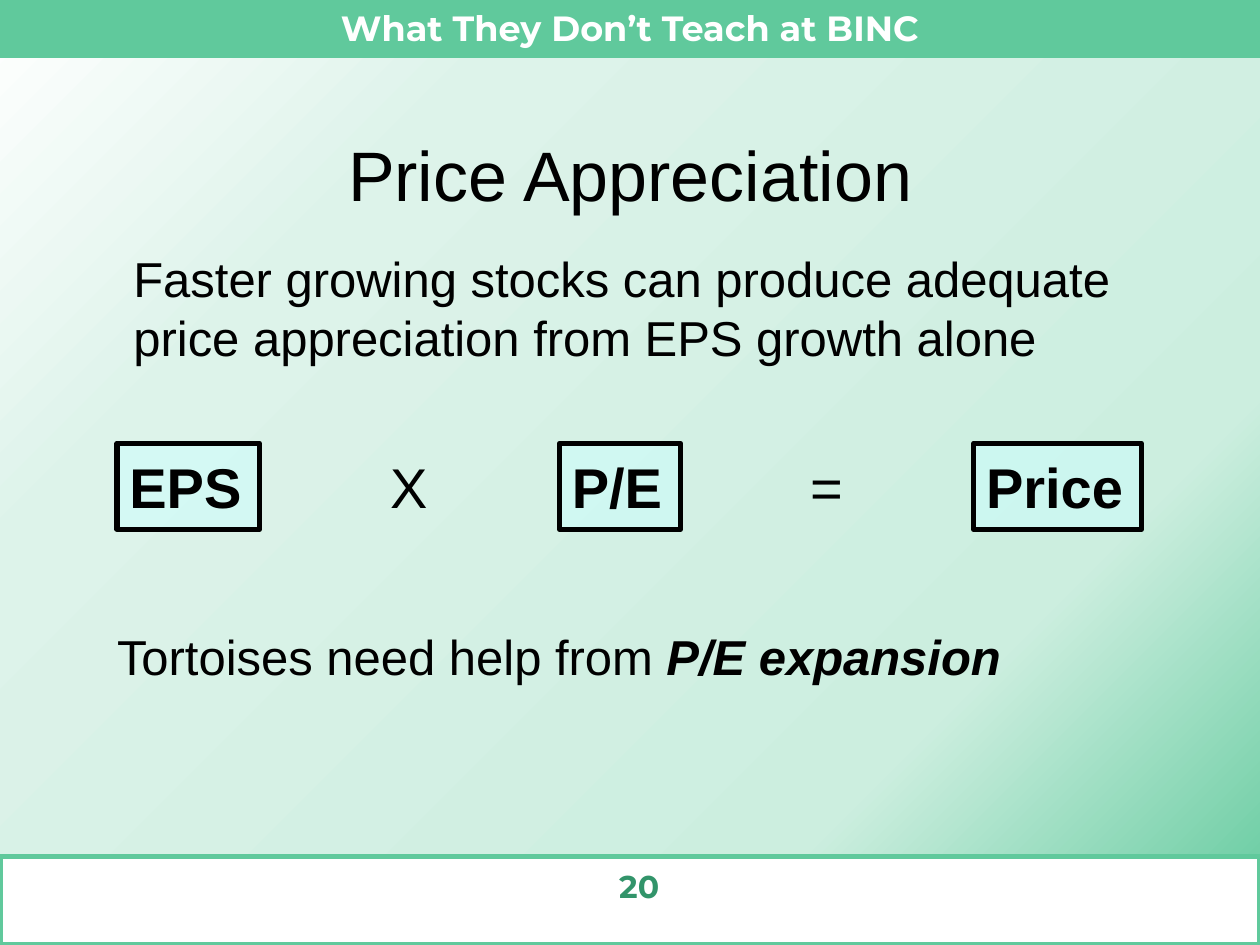
from lxml import etree
from pptx import Presentation
from pptx import util as u
from pptx.dml.color import RGBColor
from pptx.enum import shapes, text
from pptx.oxml import ns

GREEN = RGBColor(0x60, 0xC9, 0x9C)
DARK_GREEN = RGBColor(0x32, 0x94, 0x6A)
PALE_CYAN = RGBColor(0xCC, 0xFF, 0xFF)
WHITE = RGBColor(0xFF, 0xFF, 0xFF)
BLACK = RGBColor(0x00, 0x00, 0x00)
MIST = RGBColor(0xDD, 0xF3, 0xEA)
MINT = RGBColor(0xCC, 0xEE, 0xDF)


class SlideBuilder:
    body_font = "Arial"
    brand_font = "Montserrat"
    line_width = u.Pt(3)

    def __init__(self, slide):
        self.slide = slide

    def background(self, stops, angle):
        fill = self.slide.background.fill
        fill.gradient()
        fill.gradient_angle = 360 - angle
        stop_list = self.slide._element.find(".//" + ns.qn("a:gsLst"))
        for old_stop in list(stop_list):
            stop_list.remove(old_stop)
        for percent, color in stops:
            stop = etree.SubElement(stop_list, ns.qn("a:gs"), pos=str(percent * 1000))
            etree.SubElement(stop, ns.qn("a:srgbClr"), val=str(color))

    def set_text(self, shape, lines, size, color=BLACK, font=None, bold=None,
                 align=text.PP_ALIGN.LEFT, anchor=text.MSO_ANCHOR.TOP, wrap=False, grow=True):
        """Fill a shape with lines, each a list of (text, emphasised) runs."""
        frame = shape.text_frame
        frame.word_wrap = wrap
        frame.vertical_anchor = anchor
        frame.auto_size = (text.MSO_AUTO_SIZE.SHAPE_TO_FIT_TEXT if grow
                           else text.MSO_AUTO_SIZE.NONE)
        for index, runs in enumerate(lines):
            paragraph = frame.add_paragraph() if index else frame.paragraphs[0]
            paragraph.alignment = align
            paragraph.font.name = font or self.body_font
            paragraph.font.size = u.Pt(size)
            paragraph.font.color.rgb = color
            paragraph.font.bold = bold
            for words, emphasised in runs:
                run = paragraph.add_run()
                run.text = words
                if emphasised:
                    run.font.bold = run.font.italic = True

    def box(self, left, top, width, height, fill, line, opacity=None):
        shape = self.slide.shapes.add_shape(
            shapes.MSO_SHAPE.RECTANGLE, u.Cm(left), u.Cm(top), u.Cm(width), u.Cm(height))
        shape.shadow.inherit = False
        shape.fill.solid()
        shape.fill.fore_color.rgb = fill
        shape.line.color.rgb = line
        shape.line.width = self.line_width
        if opacity:
            color = shape._element.spPr.find(ns.qn("a:solidFill"))[0]
            etree.SubElement(color, ns.qn("a:alpha"), val=str(opacity * 1000))
        return shape

    def label(self, left, top, width, height, lines, size, **style):
        shape = self.slide.shapes.add_textbox(
            u.Cm(left), u.Cm(top), u.Cm(width), u.Cm(height))
        self.set_text(shape, lines, size, **style)


def main():
    presentation = Presentation()
    presentation.slide_width, presentation.slide_height = u.Cm(25.4), u.Cm(19.05)
    builder = SlideBuilder(presentation.slides.add_slide(presentation.slide_layouts[6]))
    center, middle = text.PP_ALIGN.CENTER, text.MSO_ANCHOR.MIDDLE

    # Background, footer and header bands
    builder.background([(0, WHITE), (25, MIST), (75, MINT), (100, GREEN)], 45)
    builder.box(0, 17.27, 25.4, 1.78, WHITE, GREEN)
    header = builder.box(0, 0, 25.4, 1.12, GREEN, GREEN)
    builder.set_text(header, [[("What They Don’t Teach at BINC", False)]], 20, color=WHITE,
                     font=builder.brand_font, bold=True, align=center, wrap=True)

    # Slide number
    builder.label(8.26, 17.35, 5.28, 1.27, [[("20", False)]], 18, color=DARK_GREEN,
                  font=builder.brand_font, bold=True, align=text.PP_ALIGN.RIGHT,
                  wrap=True, grow=False)

    # Title
    builder.label(1.9, 1.9, 21.6, 3.18, [[("Price Appreciation", False)]], 40,
                  align=center, anchor=middle, wrap=True, grow=False)

    # Equation: boxed terms and the operators between them
    for term, left, width in (("EPS", 2.36, 2.87), ("P/E", 11.28, 2.44), ("Price", 19.63, 3.38)):
        box = builder.box(left, 8.94, width, 1.73, PALE_CYAN, BLACK, opacity=51)
        builder.set_text(box, [[(term, False)]], 32, bold=True, anchor=middle)
    for operator, left, width in (("X", 7.62, 1.27), ("=", 16.08, 1.17)):
        builder.label(left, 8.99, width, 1.6, [[(operator, False)]], 32, anchor=middle)

    # Statements
    builder.label(2.11, 12.5, 18.49, 1.45, [[("Tortoises need help from ", False),
                                             ("P/E expansion", True)]], 28)
    builder.label(2.44, 4.88, 20.55, 2.62,
                  [[("Faster growing stocks can produce adequate", False)],
                   [("price appreciation from EPS growth alone", False)]], 28)

    presentation.save("out.pptx")


if __name__ == "__main__":
    main()
